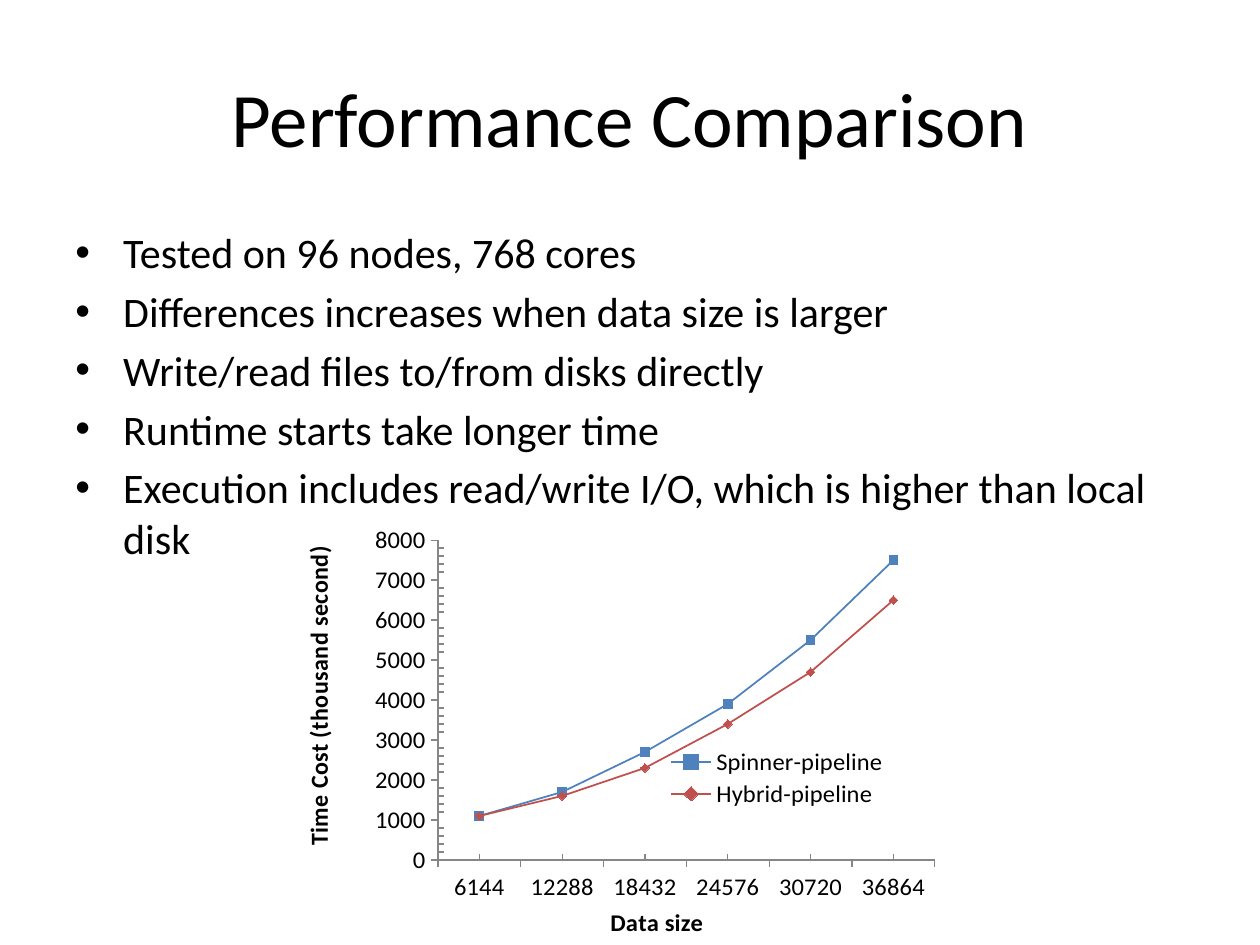
import pptx
import pptx.chart.data
import pptx.dml.color
import pptx.enum.chart
import pptx.enum.text
import pptx.oxml
import pptx.oxml.ns
import pptx.util

Inches = pptx.util.Inches
Pt = pptx.util.Pt
FONT = "Calibri"
COLORS = {"text": "000000", "spinner": "4F81BD", "hybrid": "C0504D", "axis": "868686"}
BULLETS = [
    "Tested on 96 nodes, 768 cores",
    "Differences increases when data size is larger",
    "Write/read files to/from disks directly",
    "Runtime starts take longer time",
    "Execution includes read/write I/O, which is higher than local disk",
]
DATA_SIZES = ["6144", "12288", "18432", "24576", "30720", "36864"]
MARKERS = pptx.enum.chart.XL_MARKER_STYLE
PIPELINES = [
    ("Spinner-pipeline", [1100, 1700, 2700, 3900, 5500, 7500], "spinner", MARKERS.SQUARE),
    ("Hybrid-pipeline", [1100, 1600, 2300, 3400, 4700, 6500], "hybrid", MARKERS.DIAMOND),
]


def rgb(name):
    """Return the named colour."""
    return pptx.dml.color.RGBColor.from_string(COLORS[name])


def format_font(font, size, bold=False, color="text"):
    """Set the typeface, size, weight and colour of a font."""
    font.name = FONT
    font.size = Pt(size)
    font.bold = bold
    font.color.rgb = rgb(color)


def write_text(paragraph, text, size, bold=False, color="text", align=None):
    """Write one formatted run into a paragraph."""
    run = paragraph.add_run()
    run.text = text
    format_font(run.font, size, bold, color)
    paragraph.alignment = align


def add_bullet(paragraph, indent):
    """Give a paragraph a hanging bullet and space before of a fifth of a line."""
    properties = paragraph._p.get_or_add_pPr()
    properties.set("marL", str(indent))
    properties.set("indent", str(-indent))
    namespace = pptx.oxml.ns.nsdecls("a")
    for xml in (
        f'<a:spcBef {namespace}><a:spcPct val="20000"/></a:spcBef>',
        f'<a:buFont {namespace} typeface="Arial"/>',
        f'<a:buChar {namespace} char="•"/>',
    ):
        properties.append(pptx.oxml.parse_xml(xml))


def set_layout(element, index, target=None, **fractions):
    """Place a chart part by fractions of the chart's size."""
    old_layout = element.find(pptx.oxml.ns.qn("c:layout"))
    if old_layout is not None:
        element.remove(old_layout)
    parts = f'<c:layoutTarget val="{target}"/>' if target else ""
    parts += "".join(f'<c:{key}Mode val="edge"/>' for key in "xy")
    parts += "".join(f'<c:{key} val="{value}"/>' for key, value in fractions.items())
    namespace = pptx.oxml.ns.nsdecls("c")
    xml = f"<c:layout {namespace}><c:manualLayout>{parts}</c:manualLayout></c:layout>"
    element.insert(index, pptx.oxml.parse_xml(xml))


def place_title(slide, text, left, top, width, height):
    """Place and format the slide title."""
    title = slide.shapes.title
    title.left, title.top, title.width, title.height = left, top, width, height
    frame = title.text_frame
    frame.vertical_anchor = pptx.enum.text.MSO_ANCHOR.MIDDLE
    write_text(frame.paragraphs[0], text, 44, align=pptx.enum.text.PP_ALIGN.CENTER)


def place_bullets(slide, lines, left, top, width, height):
    """Place the bulleted findings."""
    frame = slide.shapes.add_textbox(left, top, width, height).text_frame
    frame.word_wrap = True
    for index, line in enumerate(lines):
        paragraph = frame.add_paragraph() if index else frame.paragraphs[0]
        write_text(paragraph, line, 24)
        add_bullet(paragraph, Inches(0.38))


def format_axis(axis, title, x, y):
    """Format an axis with its ticks and its title."""
    axis.has_major_gridlines = False
    axis.major_tick_mark = pptx.enum.chart.XL_TICK_MARK.OUTSIDE
    axis.minor_tick_mark = pptx.enum.chart.XL_TICK_MARK.INSIDE
    axis.format.line.color.rgb = rgb("axis")
    axis.format.line.width = Pt(0.75)
    format_font(axis.tick_labels.font, 14)
    axis_title = axis.axis_title
    write_text(axis_title.text_frame.paragraphs[0], title, 14, bold=True)
    set_layout(axis_title._element, 1, x=x, y=y)


def place_chart(slide, left, top, width, height):
    """Place the line chart of time cost against data size."""
    data = pptx.chart.data.CategoryChartData()
    data.categories = DATA_SIZES
    for name, values, _, _ in PIPELINES:
        data.add_series(name, values)
    chart_type = pptx.enum.chart.XL_CHART_TYPE.LINE_MARKERS
    chart = slide.shapes.add_chart(chart_type, left, top, width, height, data).chart
    chart.has_title = False
    format_font(chart.font, 14)
    for series, (_, _, color, marker) in zip(chart.plots[0].series, PIPELINES):
        series.smooth = False
        series.format.line.color.rgb = rgb(color)
        series.format.line.width = Pt(1)
        series.marker.style = marker
        series.marker.size = 5
        series.marker.format.fill.solid()
        series.marker.format.fill.fore_color.rgb = rgb(color)
        series.marker.format.line.color.rgb = rgb(color)
    format_axis(chart.category_axis, "Data size", 0.48, 0.91)
    format_axis(chart.value_axis, "Time Cost (thousand second)", 0.02, 0.05)
    chart.value_axis.minimum_scale = 0
    chart.value_axis.maximum_scale = 8000
    chart.value_axis.major_unit = 1000
    chart.value_axis.minor_unit = 200
    chart.has_legend = True
    chart.legend.position = pptx.enum.chart.XL_LEGEND_POSITION.RIGHT
    chart.legend.include_in_layout = False
    format_font(chart.legend.font, 14)
    set_layout(chart.legend._element, 1, x=0.56, y=0.53, w=0.35, h=0.16)
    plot_area = chart._chartSpace.chart.plotArea
    set_layout(plot_area, 0, "inner", x=0.23, y=0.03, w=0.74, h=0.78)


def main():
    """Build the slide and save it."""
    presentation = pptx.Presentation()
    presentation.slide_width = Inches(10)
    presentation.slide_height = Inches(7.5)
    slide = presentation.slides.add_slide(presentation.slide_layouts[5])
    place_title(slide, "Performance Comparison", Inches(0.5), Inches(0.3), Inches(9), Inches(1.25))
    place_bullets(slide, BULLETS, Inches(0.5), Inches(1.75), Inches(9), Inches(4.95))
    place_chart(slide, Inches(2.25), Inches(4.17), Inches(5.33), Inches(3.33))
    presentation.save("out.pptx")


if __name__ == "__main__":
    main()
